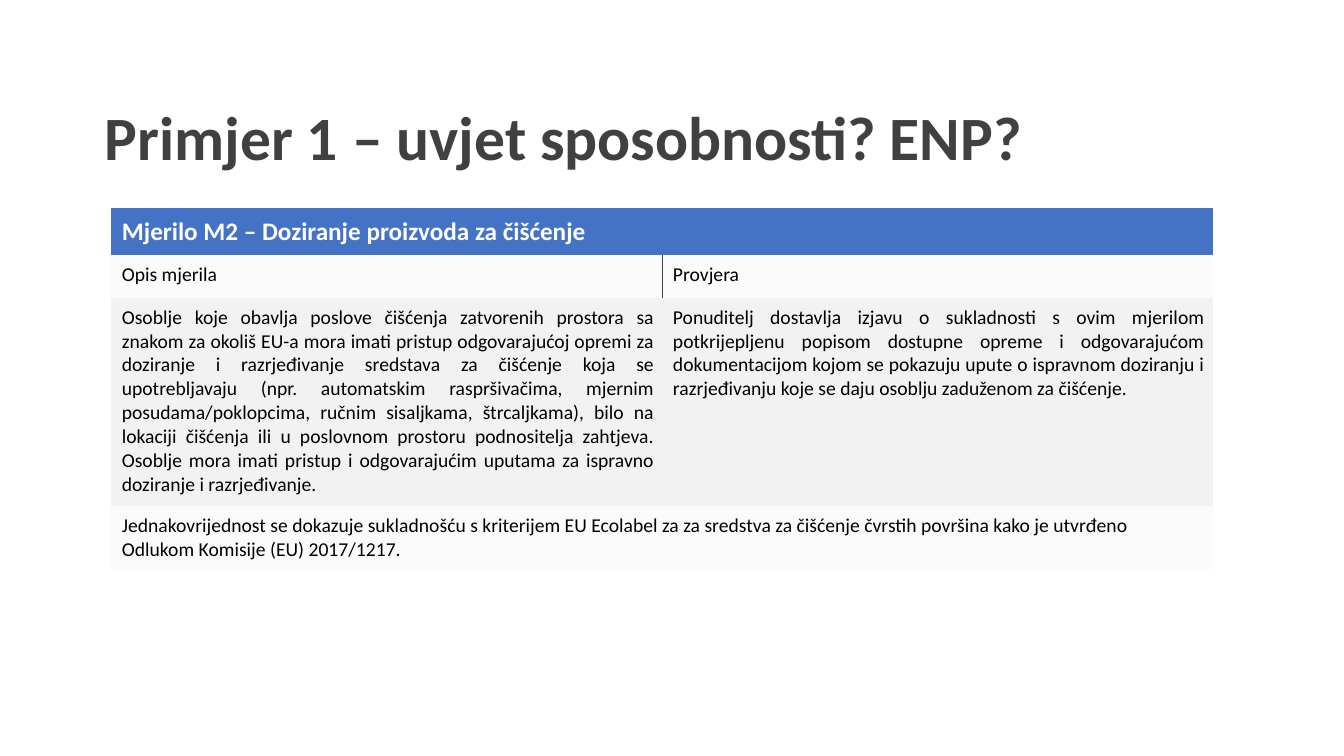
from dataclasses import dataclass

import pptx
import pptx.dml.color
import pptx.enum.text
import pptx.oxml
import pptx.oxml.ns
import pptx.slide
import pptx.table
import pptx.text.text
import pptx.util

Cm = pptx.util.Cm
Pt = pptx.util.Pt
Align = pptx.enum.text.PP_ALIGN
Anchor = pptx.enum.text.MSO_ANCHOR
qn = pptx.oxml.ns.qn

NO_STYLE_NO_GRID = "{2D5ABB26-0587-4C30-8999-92F81FD0307C}"


@dataclass(frozen=True)
class Theme:
    font: str = "Calibri"
    title_size: float = 44
    heading_size: float = 18
    body_size: float = 14
    dark: str = "404040"
    black: str = "000000"
    white: str = "FFFFFF"
    blue: str = "4472C4"
    grey: str = "F2F2F2"
    pale_opacity: int = 30


THEME = Theme()


@dataclass(frozen=True)
class Row:
    """One table row; a single text spans both columns."""
    height: float
    texts: tuple[str, ...]
    fill: str = THEME.grey
    opacity: int = 100
    size: float = THEME.body_size
    color: str = THEME.black
    bold: bool = False
    align: Align = Align.LEFT
    anchor: Anchor = Anchor.TOP
    divider: bool = False


COLUMN_WIDTHS = (13.89, 13.87)
ROWS = (
    Row(1.18, ("Mjerilo M2 – Doziranje proizvoda za čišćenje",), fill=THEME.blue,
        size=THEME.heading_size, color=THEME.white, bold=True, anchor=Anchor.MIDDLE),
    Row(1.08, ("Opis mjerila", "Provjera"), opacity=THEME.pale_opacity, divider=True),
    Row(5.24, (
        "Osoblje koje obavlja poslove čišćenja zatvorenih prostora sa znakom za okoliš "
        "EU-a mora imati pristup odgovarajućoj opremi za doziranje i razrjeđivanje "
        "sredstava za čišćenje koja se upotrebljavaju (npr. automatskim raspršivačima, "
        "mjernim posudama/poklopcima, ručnim sisaljkama, štrcaljkama), bilo na lokaciji "
        "čišćenja ili u poslovnom prostoru podnositelja zahtjeva. Osoblje mora imati "
        "pristup i odgovarajućim uputama za ispravno doziranje i razrjeđivanje.",
        "Ponuditelj dostavlja izjavu o sukladnosti s ovim mjerilom potkrijepljenu "
        "popisom dostupne opreme i odgovarajućom dokumentacijom kojom se pokazuju upute "
        "o ispravnom doziranju i razrjeđivanju koje se daju osoblju zaduženom za "
        "čišćenje.",
    ), align=Align.JUSTIFY),
    Row(1.61, (
        "Jednakovrijednost se dokazuje sukladnošću s kriterijem EU Ecolabel za za "
        "sredstva za čišćenje čvrstih površina kako je utvrđeno Odlukom Komisije (EU) "
        "2017/1217.",
    ), opacity=THEME.pale_opacity),
)


def add_run(para: pptx.text.text._Paragraph, text: str, size: float, color: str,
            bold: bool) -> None:
    span = para.add_run()
    span.text = text
    span.font.name = THEME.font
    span.font.size = Pt(size)
    span.font.bold = bold
    span.font.color.rgb = pptx.dml.color.RGBColor.from_string(color)


def add_title(page: pptx.slide.Slide, text: str) -> None:
    box = page.shapes.add_textbox(Cm(2.39), Cm(2.16), Cm(28.58), Cm(2.77))
    frame = box.text_frame
    frame.word_wrap = True
    frame.vertical_anchor = Anchor.MIDDLE
    para = frame.paragraphs[0]
    para.line_spacing = 0.9
    add_run(para, text, THEME.title_size, THEME.dark, True)


def fill_cell(cell: pptx.table._Cell, color: str, opacity: int) -> None:
    cell.fill.solid()
    cell.fill.fore_color.rgb = pptx.dml.color.RGBColor.from_string(color)
    if opacity < 100:
        swatch = cell._tc.tcPr.find(f".//{qn('a:srgbClr')}")
        alpha = swatch.makeelement(qn("a:alpha"), {"val": str(opacity * 1000)})
        swatch.append(alpha)


def add_border(cell: pptx.table._Cell, side: str) -> None:
    """Draw a thin line on the side named by its XML tag, such as lnL."""
    line = pptx.oxml.parse_xml(
        f'<a:{side} {pptx.oxml.ns.nsdecls("a")} w="{Pt(0.5)}"><a:solidFill>'
        f'<a:srgbClr val="{THEME.dark}"/></a:solidFill></a:{side}>')
    cell._tc.get_or_add_tcPr().insert(0, line)


def write_cell(cell: pptx.table._Cell, text: str, row: Row) -> None:
    cell.margin_left = Cm(0.27)
    cell.margin_right = cell.margin_top = cell.margin_bottom = Cm(0.2)
    cell.vertical_anchor = row.anchor
    para = cell.text_frame.paragraphs[0]
    para.alignment = row.align
    add_run(para, text, row.size, row.color, row.bold)


def add_criterion_table(page: pptx.slide.Slide) -> None:
    height = sum(row.height for row in ROWS)
    table = page.shapes.add_table(
        len(ROWS), len(COLUMN_WIDTHS), Cm(2.8), Cm(5.24),
        Cm(sum(COLUMN_WIDTHS)), Cm(height)).table
    table.horz_banding = False
    table._tbl.tblPr.find(qn("a:tableStyleId")).text = NO_STYLE_NO_GRID
    for column, width in zip(table.columns, COLUMN_WIDTHS):
        column.width = Cm(width)
    for index, row in enumerate(ROWS):
        table.rows[index].height = Cm(row.height)
        left, right = table.cell(index, 0), table.cell(index, 1)
        for cell in (left, right):
            fill_cell(cell, row.fill, row.opacity)
        if len(row.texts) == 1:
            left.merge(right)
        for cell, text in zip((left, right), row.texts):
            write_cell(cell, text, row)
        if row.divider:
            add_border(left, "lnR")
            add_border(right, "lnL")


def main() -> None:
    deck = pptx.Presentation()
    deck.slide_width, deck.slide_height = Cm(33.87), Cm(19.05)
    page = deck.slides.add_slide(deck.slide_layouts[6])
    add_title(page, "Primjer 1 – uvjet sposobnosti? ENP?")
    add_criterion_table(page)
    deck.save("out.pptx")


if __name__ == "__main__":
    main()
